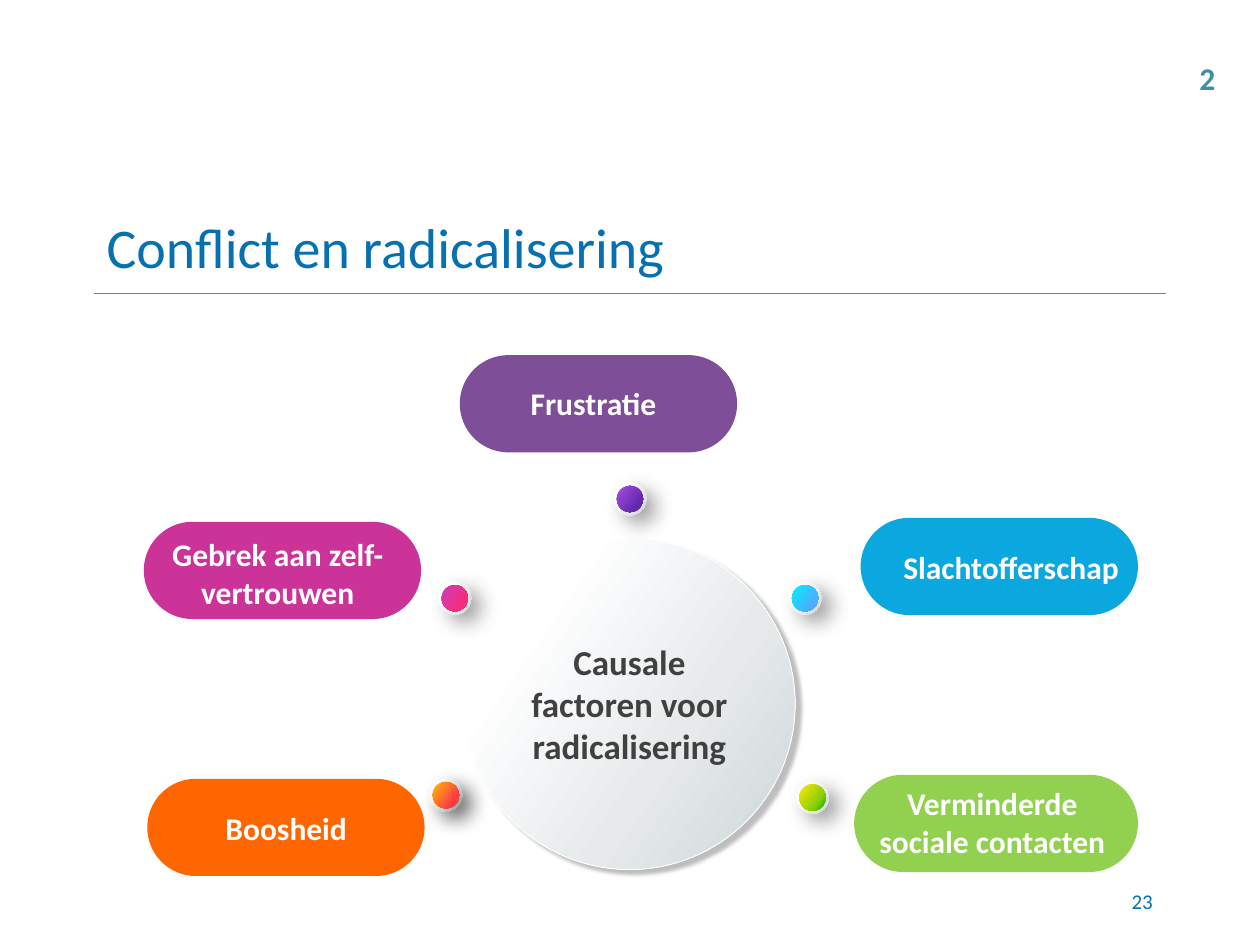
from lxml import etree
from pptx import Presentation
from pptx import util as u
from pptx.dml.color import RGBColor
from pptx.enum import shapes, text
from pptx.oxml import parse_xml
from pptx.oxml.ns import nsdecls, qn

SILVER = [(23, "FFFFFF"), (63, "E6EAEB"), (100, "CDD5D8")]
DOT_SHADOW = (38, 12, 7.1)  # opacity %, blur pt, distance pt
DOT, CORE = 0.66, 0.53
PILL_W, PILL_H = 5.59, 1.96
CENTER, MIDDLE = text.PP_ALIGN.CENTER, text.MSO_ANCHOR.MIDDLE

# Left, top, width, colour
PILLS = [
    (2.97, 15.7, PILL_W, "FF6600"),
    (2.9, 10.52, PILL_W, "CC3399"),
    (9.27, 7.16, PILL_W, "7E4E99"),
    (17.35, 10.44, PILL_W, "0BA7DF"),
    (17.22, 15.62, 5.72, "92D050"),
]
# Left, top, gradient of the core, shadow of the core
DOTS = [
    (8.66, 15.7, [(0, "FFC203"), (37, "FF7D25"), (77, "FF3847")], DOT_SHADOW),
    (8.84, 11.73, [(1, "C23FC6"), (36, "E1359B"), (98, "FF2A70")], None),
    (12.37, 9.73, [(0, "A852E6"), (37, "863DC8"), (77, "6428AA")], None),
    (15.9, 11.73, [(0, "00F2FE"), (37, "28CFFE"), (77, "4FACFE")], None),
    (16.05, 15.75, [(0, "FFEA03"), (71, "85CE02"), (98, "0CB100")], None),
]
# Wording, left, top, width, height, alignment
LABELS = [
    ("Boosheid", 4.32, 16.2, 2.9, 0.97, CENTER),
    ("Gebrek aan zelf-vertrouwen", 2.97, 10.69, 5.26, 1.73, CENTER),
    ("Frustratie", 9.83, 7.65, 4.27, 0.97, CENTER),
    ("Slachtofferschap", 18.11, 10.95, 5.18, 0.97, text.PP_ALIGN.LEFT),
    ("Verminderde sociale contacten", 17.4, 15.7, 5.21, 1.73, CENTER),
]


def rgb(color):
    return RGBColor.from_string(color)


def write(sp, words, size, color, bold=False, align=text.PP_ALIGN.LEFT,
          anchor=text.MSO_ANCHOR.TOP, inset=None, wrap=True):
    tf = sp.text_frame
    frame = {"word_wrap": wrap, "vertical_anchor": anchor}
    if inset is not None:
        for side in ("left", "top", "right", "bottom"):
            frame["margin_" + side] = u.Cm(inset)
    for name, value in frame.items():
        setattr(tf, name, value)
    p = tf.paragraphs[0]
    p.alignment = align
    r = p.add_run()
    r.text = words
    for name, value in {"name": "Calibri", "size": u.Pt(size), "bold": bold}.items():
        setattr(r.font, name, value)
    r.font.color.rgb = rgb(color)


def add_text(s, box, words, size, color, **options):
    sp = s.shapes.add_textbox(*map(u.Cm, box))
    write(sp, words, size, color, **options)


def add_shape(s, kind, box):
    sp = s.shapes.add_shape(kind, *map(u.Cm, box))
    sp.shadow.inherit = False
    sp.line.fill.background()
    return sp


def add_pill(s, left, top, width, color):
    sp = add_shape(s, shapes.MSO_SHAPE.ROUNDED_RECTANGLE, (left, top, width, PILL_H))
    sp.adjustments[0] = 0.5
    sp.fill.solid()
    sp.fill.fore_color.rgb = rgb(color)


def add_ball(s, left, top, size, stops, shadow=None):
    sp = add_shape(s, shapes.MSO_SHAPE.OVAL, (left, top, size, size))
    spPr = sp._element.spPr
    # Gradient running to the lower right
    sp.fill.background()
    steps = "".join(f'<a:gs pos="{pos * 1000}"><a:srgbClr val="{color}"/></a:gs>'
                    for pos, color in stops)
    spPr.replace(spPr.find(qn("a:noFill")), parse_xml(
        f'<a:gradFill {nsdecls("a")} rotWithShape="1"><a:gsLst>{steps}</a:gsLst>'
        f'<a:lin ang="{35 * 60000}" scaled="0"/></a:gradFill>'))
    # Soft shadow
    if shadow:
        alpha, blur, dist = shadow
        spPr.find(qn("a:effectLst")).append(parse_xml(
            f'<a:outerShdw {nsdecls("a")} blurRad="{u.Pt(blur)}" dist="{u.Pt(dist)}" '
            f'dir="{39 * 60000}" algn="tl" rotWithShape="0"><a:srgbClr val="000000">'
            f'<a:alpha val="{alpha * 1000}"/></a:srgbClr></a:outerShdw>'))
    return sp


def add_dot(s, left, top, stops, shadow):
    add_ball(s, left, top, DOT, SILVER, DOT_SHADOW)
    gap = (DOT - CORE) / 2
    add_ball(s, left + gap, top + gap, CORE, stops, shadow)


def add_rule(s, left, right, top, color):
    line = s.shapes.add_connector(shapes.MSO_CONNECTOR.STRAIGHT,
                                  *map(u.Cm, (left, top, right, top)))
    line.line.color.rgb = rgb(color)
    line.line.width = u.Pt(0.75)
    etree.SubElement(line._element.spPr, qn("a:effectLst"))


def main():
    prs = Presentation()
    prs.slide_width, prs.slide_height = u.Cm(25.4), u.Cm(19.05)
    s = prs.slides.add_slide(prs.slide_layouts[6])

    # Title, rule and page numbers
    add_rule(s, 1.9, 23.5, 5.92, "0BA7DF")
    add_text(s, (1.9, 4.01, 21.59, 1.9), "Conflict en radicalisering", 32, "0770B1",
             anchor=MIDDLE)
    add_text(s, (18.21, 17.65, 5.28, 1.02), "23", 12, "0770B1",
             align=text.PP_ALIGN.RIGHT, anchor=MIDDLE)
    add_text(s, (23.93, 1.07, 0.84, 1.02), "2", 18, "3E8EA9", bold=True, wrap=False)

    # Central circle
    hub = add_ball(s, 9.35, 10.85, 6.68, SILVER, (26, 2, 3.7))
    hub.line.color.rgb = rgb("FFFFFF")
    hub.line.width = u.Pt(0.5)
    write(hub, "Causale factoren voor radicalisering", 20, "404040", bold=True,
          align=CENTER, anchor=MIDDLE, inset=0.1)

    # Factors around it
    for pill in PILLS:
        add_pill(s, *pill)
    for dot in DOTS:
        add_dot(s, *dot)
    for words, *box, align in LABELS:
        add_text(s, box, words, 18, "FFFFFF", bold=True, align=align, inset=0.1)

    prs.save("out.pptx")


if __name__ == "__main__":
    main()
